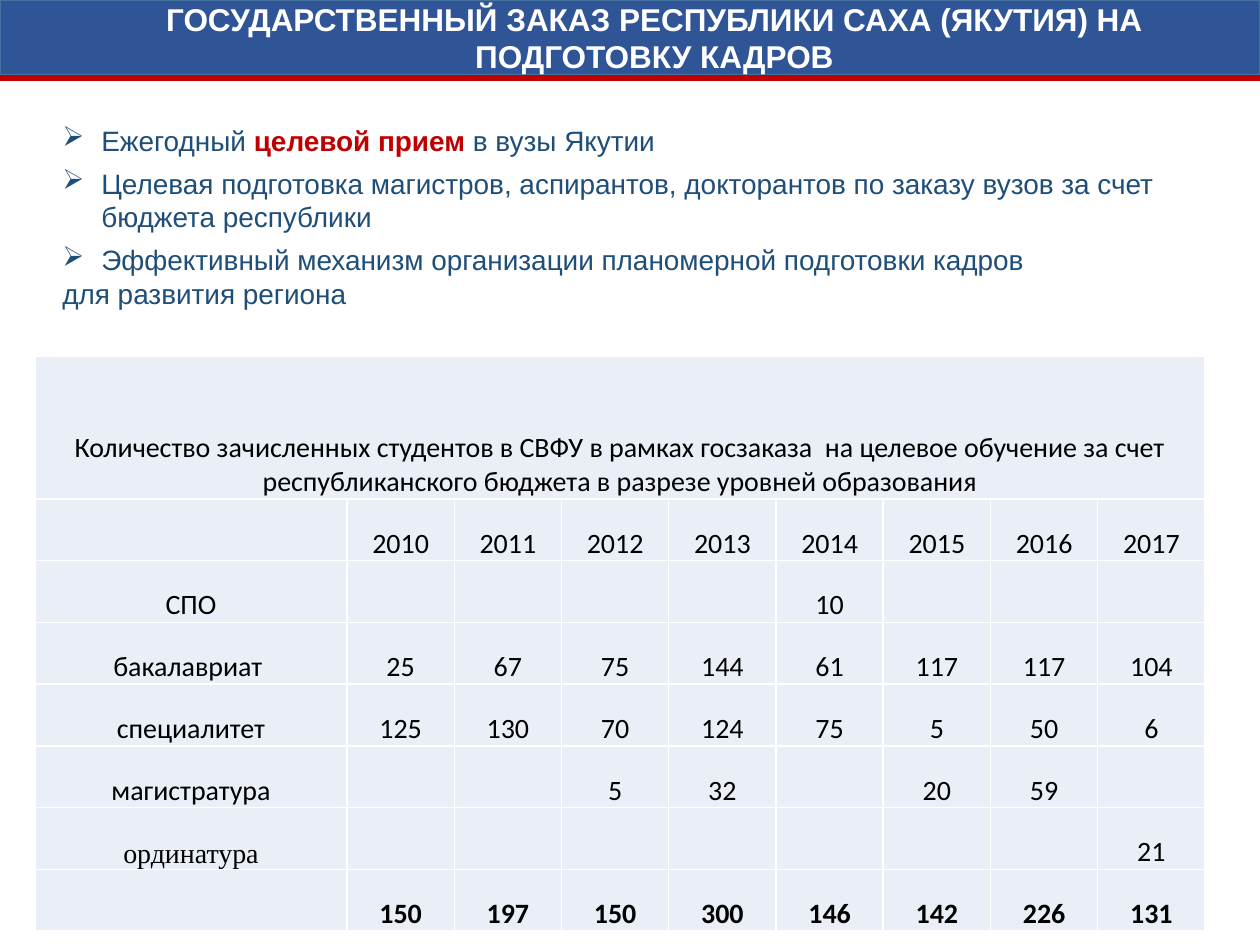
from lxml import etree
from pptx import Presentation
from pptx import util as u
from pptx.dml.color import RGBColor
from pptx.enum import shapes, text
from pptx.oxml.ns import qn

COLORS = {
    "banner": "2F5597",
    "banner_edge": "43739E",
    "accent": "C00000",
    "body": "1F4E79",
    "cell": "EAEFF7",
    "white": "FFFFFF",
    "black": "000000",
}
GOALS = [
    [("Ежегодный ", False), ("целевой прием ", True), ("в вузы Якутии", False)],
    [("Целевая подготовка магистров, аспирантов, докторантов по заказу вузов "
      "за счет бюджета республики", False)],
    [("Эффективный механизм организации планомерной подготовки кадров", False)],
]
CAPTION = ("Количество зачисленных студентов в СВФУ в рамках госзаказа  на целевое обучение "
           "за счет республиканского бюджета в разрезе уровней образования")
ENROLMENT = [
    ["", *range(2010, 2018)],
    ["СПО", "", "", "", "", 10, "", "", ""],
    ["бакалавриат ", 25, 67, 75, 144, 61, 117, 117, 104],
    ["специалитет", 125, 130, 70, 124, 75, 5, 50, 6],
    ["магистратура", "", "", 5, 32, "", 20, 59, ""],
    ["ординатура", "", "", "", "", "", "", "", 21],
    ["", 150, 197, 150, 300, 146, 142, 226, 131],
]


def px(length):
    return u.Inches(length / 126)


def rgb(name):
    return RGBColor.from_string(COLORS[name])


def style(font, size, face, color, bold=False):
    font.size = u.Pt(size)
    font.name = face
    font.color.rgb = rgb(color)
    font.bold = bold


def add_bar(slide, left, top, width, height, color):
    bar = slide.shapes.add_shape(shapes.MSO_SHAPE.RECTANGLE,
                                 px(left), px(top), px(width), px(height))
    bar.shadow.inherit = False
    bar.fill.solid()
    bar.fill.fore_color.rgb = rgb(color)
    bar.line.fill.background()
    return bar


def add_banner(slide, left, top, width, height):
    stripe = 6
    banner = add_bar(slide, left, top, width, height - stripe, "banner")
    banner.line.color.rgb = rgb("banner_edge")
    banner.line.width = u.Pt(1)
    frame = banner.text_frame
    frame.word_wrap = True
    frame.vertical_anchor = text.MSO_ANCHOR.MIDDLE
    heading = frame.paragraphs[0]
    heading.text = "ГОСУДАРСТВЕННЫЙ ЗАКАЗ РЕСПУБЛИКИ САХА (ЯКУТИЯ) НА ПОДГОТОВКУ КАДРОВ"
    heading.alignment = text.PP_ALIGN.CENTER
    heading._p.get_or_add_pPr().set("marL", str(px(49)))
    style(heading.font, 18, "Arial", "white", True)
    add_bar(slide, left, top + height - stripe, width, stripe, "accent")


def add_bullet(paragraph, indent):
    properties = paragraph._p.get_or_add_pPr()
    properties.set("marL", str(px(indent)))
    properties.set("indent", str(-px(indent)))
    etree.SubElement(properties, qn("a:buChar")).set("char", "➢")


def add_goals(slide, left, top, width, height):
    goals = slide.shapes.add_textbox(px(left), px(top), px(width), px(height))
    frame = goals.text_frame
    frame.word_wrap = True
    frame.auto_size = text.MSO_AUTO_SIZE.SHAPE_TO_FIT_TEXT
    for index, phrases in enumerate(GOALS):
        goal = frame.add_paragraph() if index else frame.paragraphs[0]
        add_bullet(goal, 39)
        if index:
            goal.space_before = u.Pt(5.4)
        style(goal.font, 16, "Arial", "body")
        for phrase, stressed in phrases:
            run = goal.add_run()
            run.text = phrase
            if stressed:
                style(run.font, 16, "Arial", "accent", True)
    closing = frame.add_paragraph()
    closing.text = "для развития региона"
    style(closing.font, 16, "Arial", "body")


def add_borders(cell):
    properties = cell._tc.get_or_add_tcPr()
    for position, side in enumerate(("lnL", "lnR", "lnT", "lnB")):
        border = etree.Element(qn(f"a:{side}"), w=str(u.Pt(1)))
        fill = etree.SubElement(border, qn("a:solidFill"))
        etree.SubElement(fill, qn("a:srgbClr")).set("val", COLORS["white"])
        properties.insert(position, border)


def fill_cell(cell, value, face="Calibri", bold=False):
    cell.fill.solid()
    cell.fill.fore_color.rgb = rgb("cell")
    cell.vertical_anchor = text.MSO_ANCHOR.BOTTOM
    cell.margin_left = cell.margin_right = cell.margin_top = px(1)
    cell.margin_bottom = 0
    add_borders(cell)
    entry = cell.text_frame.paragraphs[0]
    entry.text = str(value)
    entry.alignment = text.PP_ALIGN.CENTER
    style(entry.font, 16, face, "black", bold)


def add_enrolment(slide, left, top, width, height):
    caption_height, level_width = 143, 312
    years = len(ENROLMENT[0]) - 1
    table = slide.shapes.add_table(len(ENROLMENT) + 1, years + 1,
                                   px(left), px(top), px(width), px(height)).table
    table.first_row = table.horz_banding = False
    for index, column in enumerate(table.columns):
        column.width = px((width - level_width) / years if index else level_width)
    for index, row in enumerate(table.rows):
        row.height = px((height - caption_height) / len(ENROLMENT) if index else caption_height)
    for column in range(years + 1):
        fill_cell(table.cell(0, column), "" if column else CAPTION)
    table.cell(0, 0).merge(table.cell(0, years))
    for row, values in enumerate(ENROLMENT, 1):
        for column, value in enumerate(values):
            face = "Times New Roman" if value == "ординатура" else "Calibri"
            fill_cell(table.cell(row, column), value, face, row == len(ENROLMENT))


def main():
    deck = Presentation()
    deck.slide_width, deck.slide_height = px(1260), px(945)
    slide = deck.slides.add_slide(deck.slide_layouts[6])
    add_goals(slide, 50, 117, 1210, 200)
    add_banner(slide, 0, 0, 1260, 81)
    add_enrolment(slide, 35, 356, 1170, 575)
    deck.save("out.pptx")


if __name__ == "__main__":
    main()
